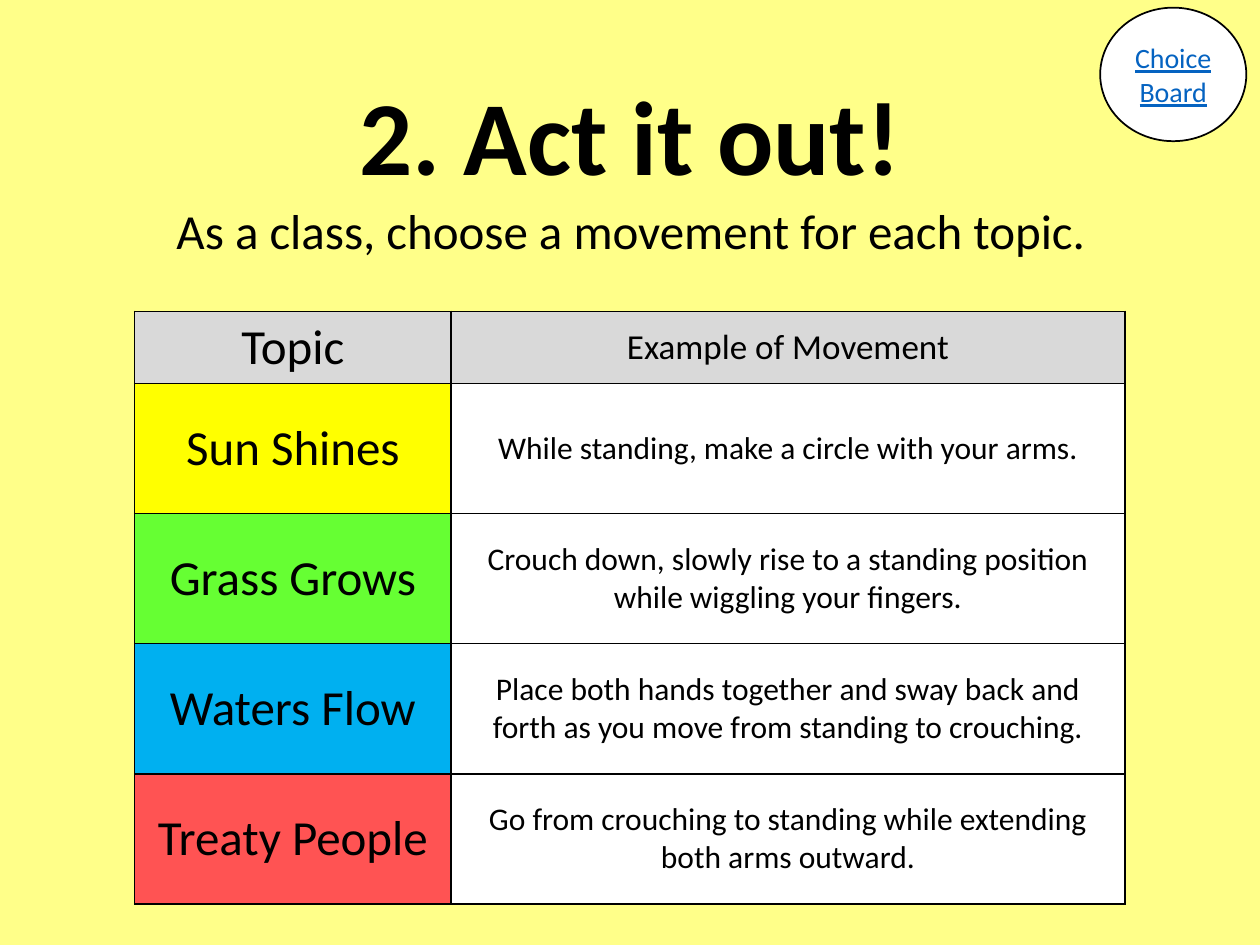
from pptx import Presentation
from pptx.dml.color import RGBColor
from pptx.enum.shapes import MSO_SHAPE as Shape
from pptx.enum.text import MSO_ANCHOR as Anchor, PP_ALIGN as Align
from pptx.oxml import parse_xml
from pptx.oxml.ns import nsdecls
from pptx.util import Pt

TITLE = "2. Act it out!"
INSTRUCTION = "As a class, choose a movement for each topic."
BADGE = "Choice Board"
HEADINGS = ("Topic", "Example of Movement")
MOVEMENTS = [
    ("Sun Shines", "While standing, make a circle with your arms.", "FFFF00"),
    ("Grass Grows", "Crouch down, slowly rise to a standing position while wiggling your fingers.", "66FF33"),
    ("Waters Flow", "Place both hands together and sway back and forth as you move from standing to crouching.", "00B0F0"),
    ("Treaty People", "Go from crouching to standing while extending both arms outward.", "FF5353"),
]
THEME = {
    "font": "Calibri", "background": "FFFF89", "ink": "000000", "paper": "FFFFFF",
    "heading": "D9D9D9", "link": "0563C1",
    "title": 60, "topic": 28, "column": 20, "movement": 18, "badge": 16,
}
COLUMN_WIDTHS = (180.7, 385.2)
HEADING_HEIGHT, MOVEMENT_HEIGHT = 41.3, 74.3


def write(frame, text, size, color=THEME["ink"], bold=False, underline=False, spacing=None):
    frame.word_wrap = True
    frame.vertical_anchor = Anchor.MIDDLE
    frame.text = text
    paragraph = frame.paragraphs[0]
    paragraph.alignment = Align.CENTER
    paragraph.line_spacing = spacing
    font = paragraph.font
    font.name, font.size = THEME["font"], Pt(size)
    font.bold, font.underline = bold, underline
    font.color.rgb = RGBColor.from_string(color)


def paint(fill, color):
    fill.solid()
    fill.fore_color.rgb = RGBColor.from_string(color)


def add_line(slide, box, text, size, **style):
    frame = slide.shapes.add_textbox(*map(Pt, box)).text_frame
    write(frame, text, size, **style)


def outline(cell):
    properties = cell._tc.get_or_add_tcPr()
    for position, side in enumerate(("lnL", "lnR", "lnT", "lnB")):
        border = parse_xml(
            f'<a:{side} {nsdecls("a")} w="{Pt(1)}"><a:solidFill>'
            f'<a:srgbClr val="{THEME["ink"]}"/></a:solidFill></a:{side}>')
        properties.insert(position, border)


def add_movements(slide):
    rows = [(HEADINGS, (THEME["heading"],) * 2, (THEME["topic"], THEME["column"]))]
    rows += [((topic, movement), (color, THEME["paper"]), (THEME["topic"], THEME["movement"]))
             for topic, movement, color in MOVEMENTS]
    heights = [HEADING_HEIGHT] + [MOVEMENT_HEIGHT] * len(MOVEMENTS)
    table = slide.shapes.add_table(
        len(rows), len(COLUMN_WIDTHS), Pt(77), Pt(178),
        Pt(sum(COLUMN_WIDTHS)), Pt(sum(heights))).table
    for column, width in zip(table.columns, COLUMN_WIDTHS):
        column.width = Pt(width)
    for row, height, (texts, fills, sizes) in zip(table.rows, heights, rows):
        row.height = Pt(height)
        for cell, text, fill, size in zip(row.cells, texts, fills, sizes):
            write(cell.text_frame, text, size)
            cell.vertical_anchor = Anchor.MIDDLE
            paint(cell.fill, fill)
            outline(cell)


def add_badge(slide):
    badge = slide.shapes.add_shape(Shape.OVAL, Pt(628.7), Pt(4.4), Pt(83.5), Pt(76.3))
    badge.shadow.inherit = False
    paint(badge.fill, THEME["paper"])
    badge.line.color.rgb = RGBColor.from_string(THEME["ink"])
    badge.line.width = Pt(1)
    write(badge.text_frame, BADGE, THEME["badge"], color=THEME["link"], underline=True)


def main():
    """Build the movement activity slide."""
    deck = Presentation()
    deck.slide_width, deck.slide_height = Pt(720), Pt(540)
    slide = deck.slides.add_slide(deck.slide_layouts[6])
    paint(slide.background.fill, THEME["background"])
    add_line(slide, (49.7, 28.8, 620.6, 104.4), TITLE, THEME["title"], bold=True, spacing=0.9)
    add_line(slide, (70.6, 117, 579.6, 35.3), INSTRUCTION, THEME["topic"], spacing=0.8)
    add_movements(slide)
    add_badge(slide)
    deck.save("out.pptx")


if __name__ == "__main__":
    main()
